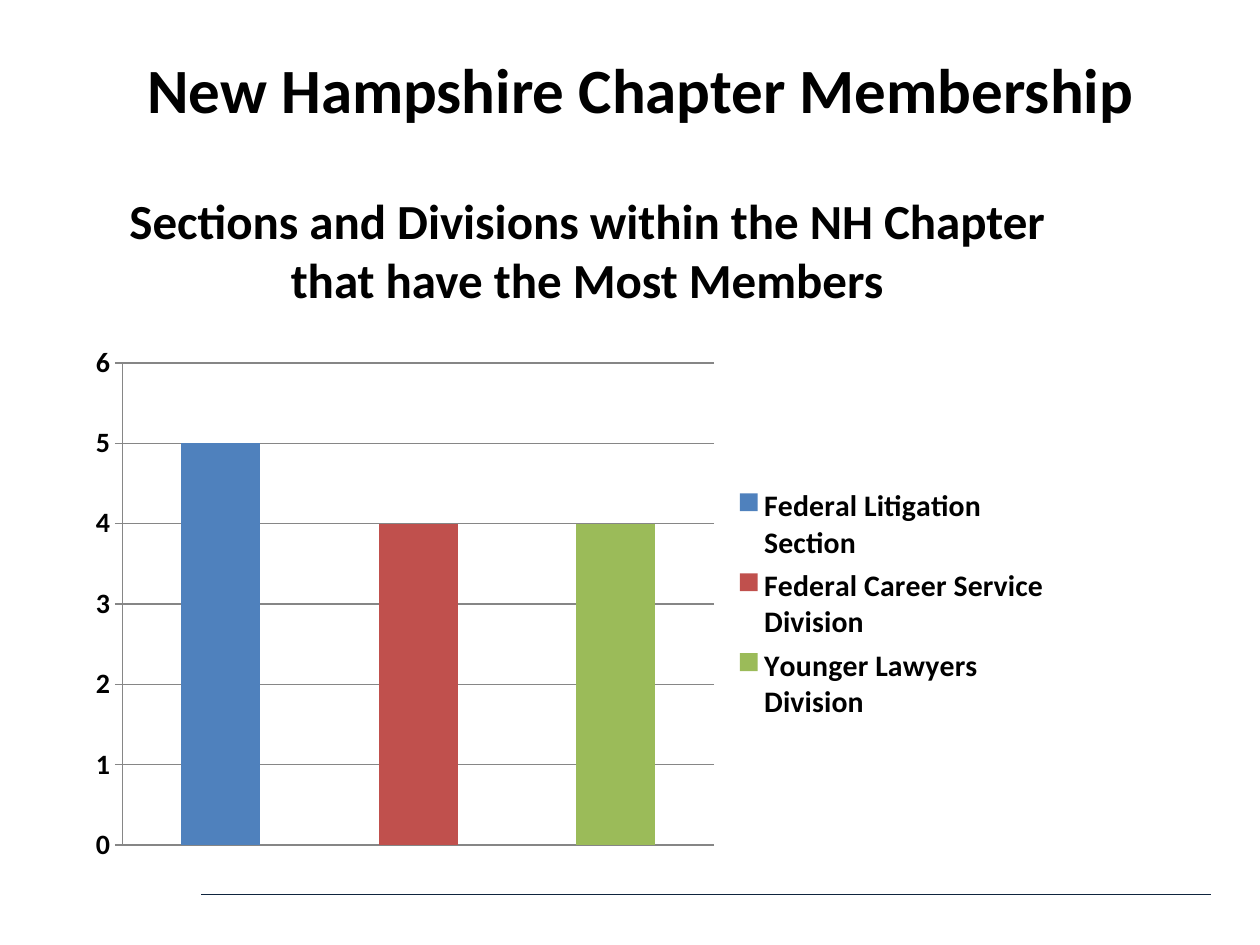
from lxml import etree
from pptx import Presentation
from pptx import util as u
from pptx.chart import data as chart_data
from pptx.dml.color import RGBColor
from pptx.enum import chart as charts, shapes, text
from pptx.oxml import ns

Cm, Pt = u.Cm, u.Pt
FONT = "Calibri"
COLOURS = {"text": "000000", "rule": "0F243E", "axis": "868686"}
# name, members, bar colour
GROUPS = [
    ("Federal Litigation Section", 5, "4F81BD"),
    ("Federal Career Service Division", 4, "C0504D"),
    ("Younger Lawyers Division", 4, "9BBB59"),
]


def style_font(font, size):
    font.name = FONT
    font.size = Pt(size)
    font.bold = True
    font.color.rgb = RGBColor.from_string(COLOURS["text"])


def style_line(line, colour):
    line.color.rgb = RGBColor.from_string(COLOURS[colour])
    line.width = Pt(0.75)


def write_heading(shape, wording, size):
    frame = shape.text_frame
    frame.word_wrap = True
    frame.auto_size = text.MSO_AUTO_SIZE.NONE
    frame.vertical_anchor = text.MSO_ANCHOR.TOP
    frame.text = wording
    paragraph = frame.paragraphs[0]
    paragraph.alignment = text.PP_ALIGN.CENTER
    style_font(paragraph.font, size)


def add_title(slide, wording):
    title = slide.shapes.title
    title.left, title.top, title.width, title.height = Cm(1.7), Cm(0.89), Cm(22.43), Cm(1.8)
    write_heading(title, wording, 36)


def add_subtitle(slide, wording):
    box = slide.shapes.add_textbox(Cm(1.47), Cm(3.71), Cm(20.73), Cm(2.64))
    write_heading(box, wording, 28)


def add_rule(slide):
    rule = slide.shapes.add_connector(
        shapes.MSO_CONNECTOR.STRAIGHT, Cm(4.06), Cm(18.03), Cm(24.41), Cm(18.03))
    style_line(rule.line, "rule")
    etree.SubElement(rule._element.spPr, ns.qn("a:effectLst"))


def place_part(part, position, **fractions):
    """Give a chart part a manual layout in fractions of the chart's size."""
    for old in part.findall(ns.qn("c:layout")):
        part.remove(old)
    layout = etree.Element(ns.qn("c:layout"))
    manual = etree.SubElement(layout, ns.qn("c:manualLayout"))
    if part.tag == ns.qn("c:plotArea"):
        etree.SubElement(manual, ns.qn("c:layoutTarget"), val="inner")
    for mode in ("xMode", "yMode"):
        etree.SubElement(manual, ns.qn(f"c:{mode}"), val="edge")
    for name, value in fractions.items():
        etree.SubElement(manual, ns.qn(f"c:{name}"), val=str(value))
    part.insert(position, layout)


def add_member_chart(slide):
    members = chart_data.CategoryChartData()
    members.categories = [name for name, _, _ in GROUPS]
    members.add_series("Series 1", [count for _, count, _ in GROUPS])
    chart = slide.shapes.add_chart(
        charts.XL_CHART_TYPE.COLUMN_CLUSTERED,
        Cm(1.47), Cm(6.78), Cm(19.89), Cm(10.8), members).chart
    chart.has_title = False
    chart.font.name = FONT
    chart.font.size = Pt(10)

    plot = chart.plots[0]
    plot.vary_by_categories = True
    plot.gap_width = 150
    for index, (_, _, colour) in enumerate(GROUPS):
        fill = plot.series[0].points[index].format.fill
        fill.solid()
        fill.fore_color.rgb = RGBColor.from_string(colour)

    chart.category_axis.visible = False
    axis = chart.value_axis
    axis.minimum_scale, axis.maximum_scale, axis.major_unit = 0, 6, 1
    axis.major_tick_mark = charts.XL_TICK_MARK.OUTSIDE
    axis.has_major_gridlines = True
    style_line(axis.major_gridlines.format.line, "axis")
    style_line(axis.format.line, "axis")
    style_font(axis.tick_labels.font, 16)

    chart.has_legend = True
    legend = chart.legend
    legend.position = charts.XL_LEGEND_POSITION.RIGHT
    legend.include_in_layout = False
    style_font(legend.font, 17)
    place_part(legend._element, 1, x=0.67, y=0.27, w=0.32, h=0.46)
    place_part(chart._chartSpace.chart.plotArea, 0, x=0.05, y=0.05, w=0.6, h=0.9)


def main():
    presentation = Presentation()
    presentation.slide_width, presentation.slide_height = Cm(25.4), Cm(19.05)
    slide = presentation.slides.add_slide(presentation.slide_layouts[5])
    add_rule(slide)
    add_subtitle(slide, "Sections and Divisions within the NH Chapter that have the Most Members")
    add_title(slide, "New Hampshire Chapter Membership")
    add_member_chart(slide)
    presentation.save("out.pptx")


if __name__ == "__main__":
    main()
